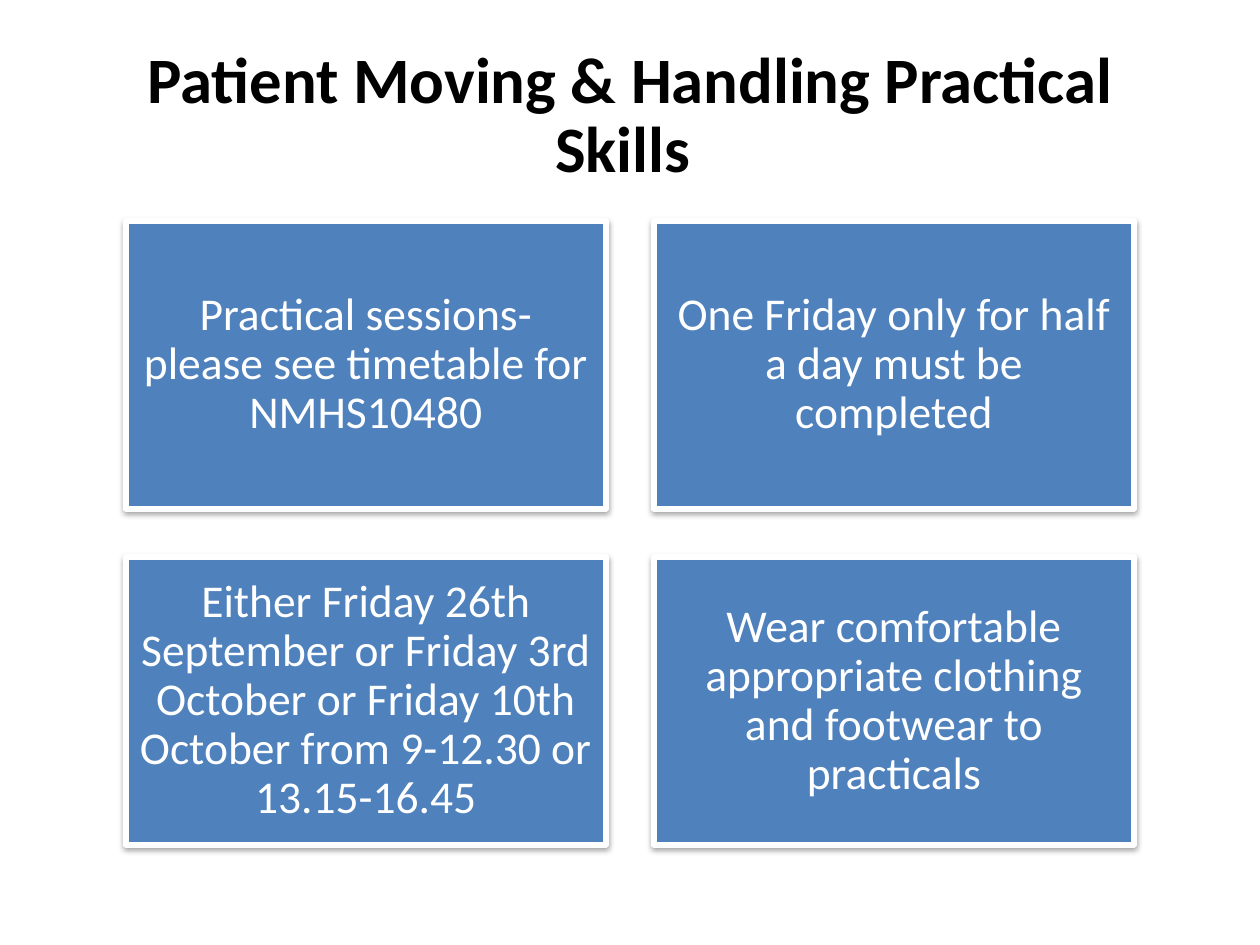
from lxml.etree import SubElement
from pptx import Presentation
from pptx.dml.color import RGBColor
from pptx.enum.shapes import MSO_SHAPE
from pptx.enum.text import MSO_ANCHOR, PP_ALIGN
from pptx.oxml.ns import qn
from pptx.util import Emu, Pt

FONT = "Calibri"
LEFT, TOP = 126, 221
WIDTH, HEIGHT, GAP = 480, 288, 48
COLS = 2
CARDS = [
    "Practical sessions-please see timetable for NMHS10480",
    "One Friday only for half a day must be completed",
    "Either Friday 26th September or Friday 3rd October or Friday 10th "
    "October from 9-12.30 or 13.15-16.45",
    "Wear comfortable appropriate clothing and footwear to practicals",
]


def px(n):
    return Emu(round(n * 914400 / 126))


def rgb(code):
    return RGBColor.from_string(code)


def write(shape, text, size, color, pad, bold=False):
    """Fill a shape with one centred paragraph; pad is (across, down)."""
    frame = shape.text_frame
    frame.word_wrap = True
    frame.vertical_anchor = MSO_ANCHOR.MIDDLE
    frame.margin_left = frame.margin_right = px(pad[0])
    frame.margin_top = frame.margin_bottom = px(pad[1])
    para = frame.paragraphs[0]
    para.alignment = PP_ALIGN.CENTER
    para.line_spacing = 0.9
    run = para.add_run()
    run.text = text
    run.font.name = FONT
    run.font.size = Pt(size)
    run.font.bold = bold
    run.font.color.rgb = rgb(color)


def shade(shape):
    """Give a shape a soft shadow straight below it."""
    shape.shadow.inherit = False
    effects = shape._element.spPr.find(qn("a:effectLst"))
    outer = SubElement(effects, qn("a:outerShdw"), blurRad="40000",
                       dist="20000", dir="5400000", rotWithShape="0")
    color = SubElement(outer, qn("a:srgbClr"), val="000000")
    SubElement(color, qn("a:alpha"), val="37000")


def add_title(slide, text):
    box = slide.shapes.add_textbox(px(63), px(38), px(1134), px(158))
    write(box, text, 37, "000000", (13, 6), bold=True)


def add_card(slide, x, y, text):
    card = slide.shapes.add_shape(
        MSO_SHAPE.RECTANGLE, px(x), px(y), px(WIDTH), px(HEIGHT))
    card.fill.solid()
    card.fill.fore_color.rgb = rgb("4F81BD")
    card.line.color.rgb = rgb("FFFFFF")
    card.line.width = Pt(3)
    shade(card)
    write(card, text, 26, "FFFFFF", (14, 14))


def main():
    deck = Presentation()
    deck.slide_width, deck.slide_height = px(1260), px(945)
    slide = deck.slides.add_slide(deck.slide_layouts[6])
    add_title(slide, "Patient Moving & Handling Practical Skills ")
    for i, text in enumerate(CARDS):
        row, col = divmod(i, COLS)
        add_card(slide, LEFT + col * (WIDTH + GAP),
                 TOP + row * (HEIGHT + GAP), text)
    deck.save("out.pptx")


if __name__ == "__main__":
    main()
